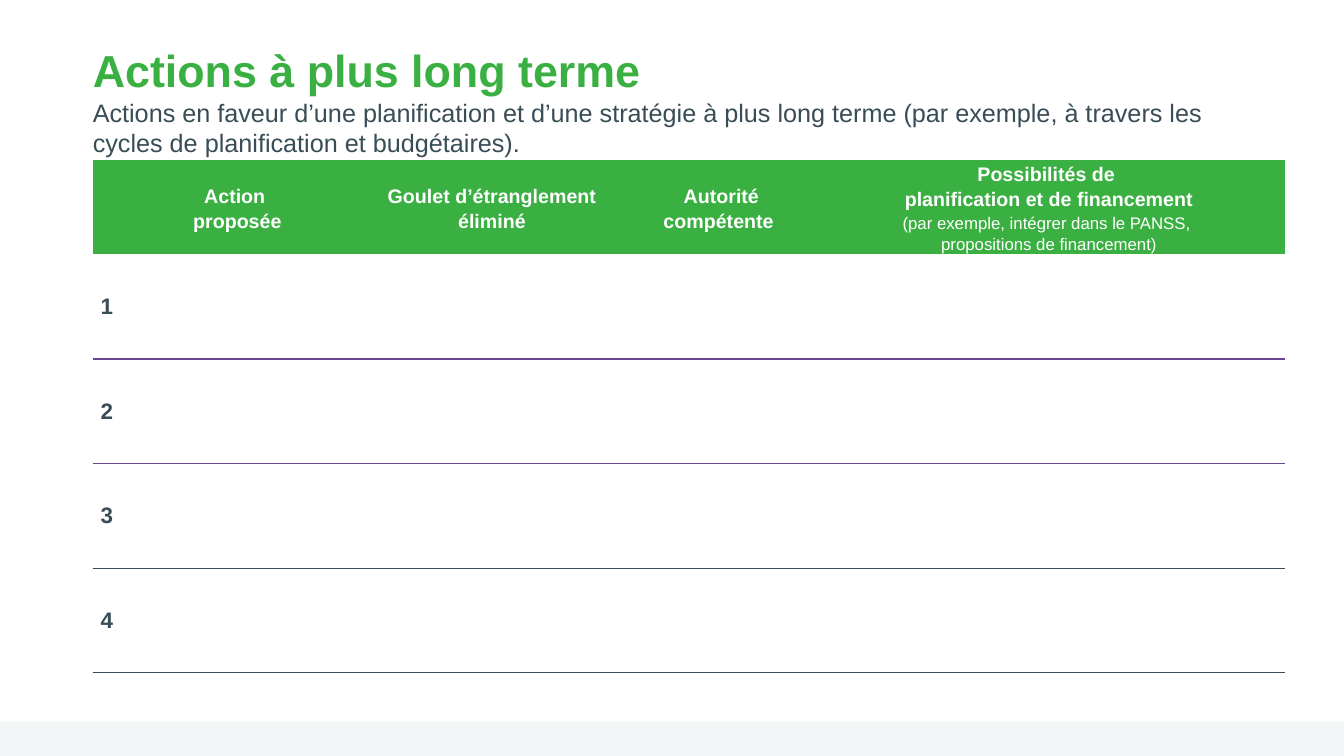
from lxml import etree
from pptx import Presentation
from pptx.dml.color import RGBColor
from pptx.enum.shapes import MSO_SHAPE
from pptx.enum.text import MSO_ANCHOR, PP_ALIGN
from pptx.oxml import parse_xml
from pptx.oxml.ns import nsdecls, qn
from pptx.util import Inches, Pt

GREEN = RGBColor(0x3B, 0xB0, 0x42)
SLATE = RGBColor(0x38, 0x4D, 0x56)
PURPLE = RGBColor(0x6C, 0x44, 0x92)
WHITE = RGBColor(0xFF, 0xFF, 0xFF)
PALE = RGBColor(0xF2, 0xF6, 0xF7)

TITLE_FORMAT = {"size": Pt(32), "bold": True, "color": GREEN}
SUBTITLE_FORMAT = {"size": Pt(18), "bold": False, "color": SLATE}
HEADER_FORMAT = {"size": Pt(14), "bold": True, "color": WHITE}
DETAIL_FORMAT = {"size": Pt(12), "bold": False, "color": WHITE}
NUMBER_FORMAT = {"size": Pt(16), "bold": True, "color": SLATE}

COLUMN_WIDTHS = [0.28, 2.31, 2.74, 1.81, 4.69]
ROW_HEIGHTS = [0.93, 1.04, 1.04, 1.04, 1.03]
RULE_COLORS = [PURPLE, PURPLE, SLATE, SLATE]
HEADERS = [
    [],
    [("Action ", HEADER_FORMAT), ("proposée", HEADER_FORMAT)],
    [("Goulet d’étranglement", HEADER_FORMAT), ("éliminé", HEADER_FORMAT)],
    [("Autorité", HEADER_FORMAT), ("compétente ", HEADER_FORMAT)],
    [
        ("Possibilités de ", HEADER_FORMAT),
        ("planification et de financement", HEADER_FORMAT),
        ("(par exemple, intégrer dans le PANSS, ", DETAIL_FORMAT),
        ("propositions de financement)", DETAIL_FORMAT),
    ],
]
NO_STYLE_ID = "{2D5ABB26-0587-4C30-8999-92F81FD0307C}"


def write_lines(paragraph, lines):
    """Write (text, format) pairs in one paragraph, with line breaks between."""
    for index, (text, values) in enumerate(lines):
        if index:
            paragraph.add_line_break()
        run = paragraph.add_run()
        run.text = text
        run.font.name = "Arial"
        for key, value in values.items():
            if key == "color":
                run.font.color.rgb = value
            else:
                setattr(run.font, key, value)


def set_margins(target, horizontal, vertical):
    target.margin_left = target.margin_right = Inches(horizontal)
    target.margin_top = target.margin_bottom = Inches(vertical)


def add_footer_band(slide):
    band = slide.shapes.add_shape(
        MSO_SHAPE.RECTANGLE, 0, Inches(7.16), Inches(13.33), Inches(0.34))
    band.shadow.inherit = False
    band.fill.solid()
    band.fill.fore_color.rgb = PALE
    band.line.fill.background()


def fill_title(slide):
    title = slide.shapes.title
    title.left, title.top = Inches(0.92), Inches(0.4)
    title.width, title.height = Inches(11.5), Inches(1.19)
    frame = title.text_frame
    set_margins(frame, 0, 0)
    frame.word_wrap = True
    frame.vertical_anchor = MSO_ANCHOR.MIDDLE
    paragraph = frame.paragraphs[0]
    paragraph.alignment = PP_ALIGN.LEFT
    write_lines(paragraph, [
        ("Actions à plus long terme ", TITLE_FORMAT),
        ("Actions en faveur d’une planification et d’une stratégie à plus "
         "long terme (par exemple, à travers les cycles de planification et "
         "budgétaires).", SUBTITLE_FORMAT),
    ])


def rule_below(cell, color):
    border = parse_xml(f'<a:lnB {nsdecls("a")} w="{Pt(1)}"/>')
    fill = etree.SubElement(border, qn("a:solidFill"))
    etree.SubElement(fill, qn("a:srgbClr"), val=str(color))
    cell._tc.get_or_add_tcPr().insert(0, border)


def fill_cell(cell, lines, spacing):
    cell.vertical_anchor = MSO_ANCHOR.MIDDLE
    paragraph = cell.text_frame.paragraphs[0]
    paragraph.alignment = PP_ALIGN.CENTER
    paragraph.line_spacing = spacing
    write_lines(paragraph, lines)


def add_actions_table(slide):
    frame = slide.shapes.add_table(
        len(ROW_HEIGHTS), len(COLUMN_WIDTHS), Inches(0.92), Inches(1.59),
        Inches(sum(COLUMN_WIDTHS)), Inches(sum(ROW_HEIGHTS)))
    table = frame.table
    table.horz_banding = False
    table._tbl.tblPr.find(qn("a:tableStyleId")).text = NO_STYLE_ID
    for column, width in zip(table.columns, COLUMN_WIDTHS):
        column.width = Inches(width)
    for row, height in zip(table.rows, ROW_HEIGHTS):
        row.height = Inches(height)

    for column, lines in enumerate(HEADERS):
        cell = table.cell(0, column)
        cell.fill.solid()
        cell.fill.fore_color.rgb = GREEN
        set_margins(cell, 0.07, 0)
        fill_cell(cell, lines, 1.15)

    for number, color in enumerate(RULE_COLORS, start=1):
        for column in range(len(COLUMN_WIDTHS)):
            cell = table.cell(number, column)
            cell.fill.background()
            set_margins(cell, 0.05, 0.05)
            rule_below(cell, color)
        fill_cell(table.cell(number, 0), [(str(number), NUMBER_FORMAT)], 1.0)


def main():
    presentation = Presentation()
    presentation.slide_width = Inches(13.33)
    presentation.slide_height = Inches(7.5)
    slide = presentation.slides.add_slide(presentation.slide_layouts[5])
    add_footer_band(slide)
    fill_title(slide)
    add_actions_table(slide)
    presentation.save("out.pptx")


if __name__ == "__main__":
    main()
